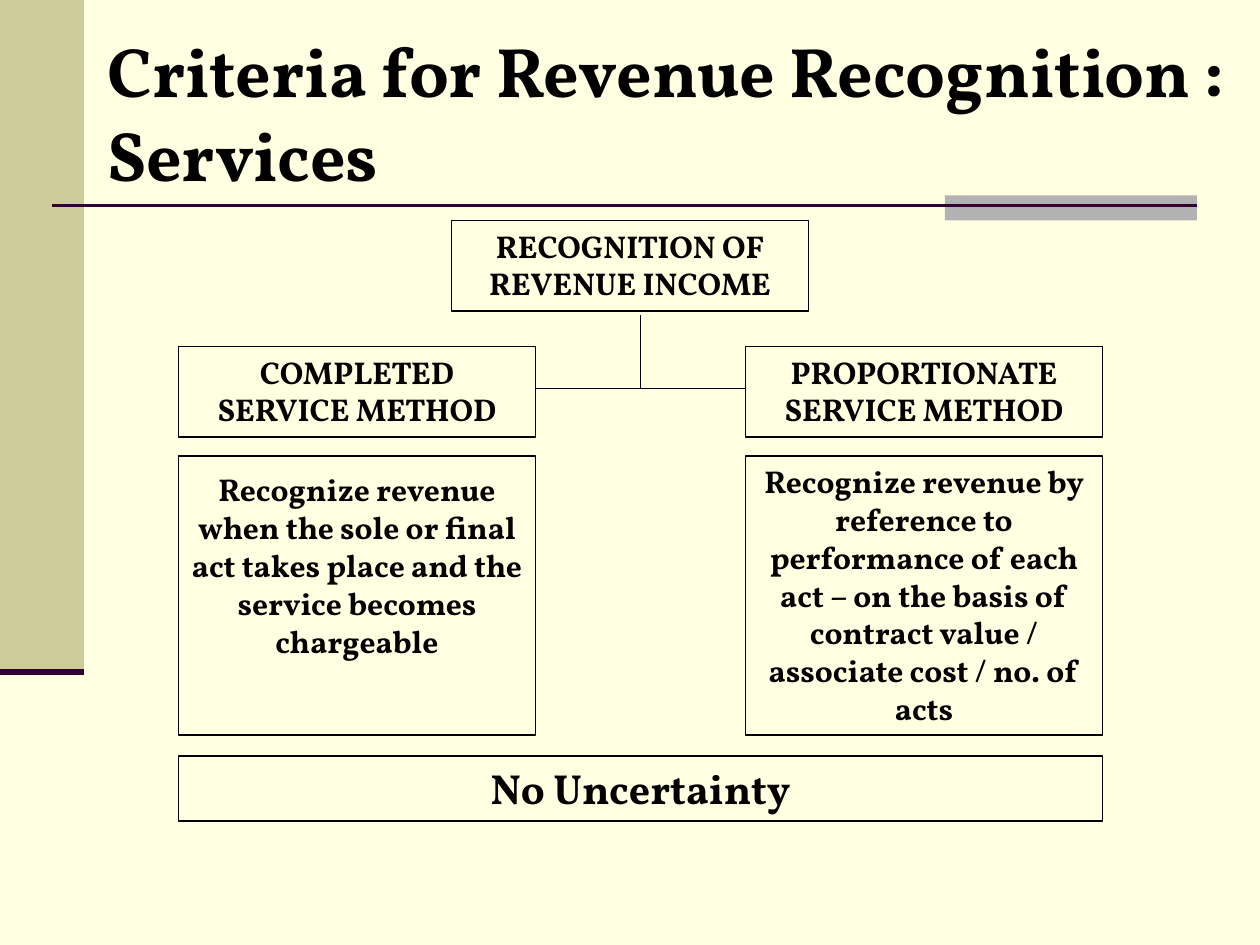
from pptx import Presentation
from pptx.dml.color import RGBColor
from pptx.enum import shapes, text
from pptx.oxml import ns
from pptx.util import Pt

CREAM = RGBColor(0xFF, 0xFF, 0xE1)
KHAKI = RGBColor(0xCC, 0xCC, 0x99)
GRAY = RGBColor(0xB2, 0xB2, 0xB2)
PLUM = RGBColor(0x33, 0x00, 0x33)
BLACK = RGBColor(0, 0, 0)
FACE = "Vollkorn"


def add_line(x1, y1, x2, y2, color, width):
    line = slide.shapes.add_connector(
        shapes.MSO_CONNECTOR.STRAIGHT, Pt(x1), Pt(y1), Pt(x2), Pt(y2))
    line.line.color.rgb = color
    line.line.width = Pt(width)
    props = line._element.spPr
    props.append(props.makeelement(ns.qn("a:effectLst"), {}))


def set_text(shape, words, size, align, inset=3.6):
    frame = shape.text_frame
    frame.word_wrap = True
    frame.auto_size = text.MSO_AUTO_SIZE.NONE
    frame.vertical_anchor = text.MSO_ANCHOR.TOP
    frame.margin_left = frame.margin_right = Pt(7.2)
    frame.margin_top = Pt(inset)
    frame.margin_bottom = Pt(3.6)
    frame.text = words
    para = frame.paragraphs[0]
    para.alignment = align
    para.font.name = FACE
    para.font.size = Pt(size)
    para.font.bold = True
    para.font.color.rgb = BLACK


deck = Presentation()
deck.slide_width, deck.slide_height = Pt(720), Pt(540)
slide = deck.slides.add_slide(deck.slide_layouts[5])
slide.background.fill.solid()
slide.background.fill.fore_color.rgb = CREAM

title = slide.shapes.title
title.left, title.top, title.width, title.height = Pt(54), Pt(12), Pt(666), Pt(103)
set_text(title, "Criteria for Revenue Recognition : Services", 40, text.PP_ALIGN.LEFT)

for x, y, w, h, color in [(0, 0, 48, 384, KHAKI), (540, 111.6, 144, 14.4, GRAY)]:
    band = slide.shapes.add_shape(
        shapes.MSO_SHAPE.RECTANGLE, Pt(x), Pt(y), Pt(w), Pt(h))
    band.shadow.inherit = False
    band.fill.solid()
    band.fill.fore_color.rgb = color
    band.line.fill.background()

add_line(30, 117.6, 684, 117.6, PLUM, 1.5)
add_line(0, 384, 48, 384, PLUM, 3.5)

LEFT, MID, RIGHT = 102, 258, 426
WIDE, HEAD, BODY = 204, 51.6, 159.6
boxes = [
    (MID, 126, WIDE, HEAD, 18, 3.6, "RECOGNITION OF REVENUE INCOME"),
    (LEFT, 198, WIDE, HEAD, 18, 3.6, "COMPLETED SERVICE METHOD"),
    (RIGHT, 198, WIDE, HEAD, 18, 3.6, "PROPORTIONATE SERVICE METHOD"),
    (LEFT, 260.6, WIDE, BODY, 18, 8.2,
     "Recognize revenue when the sole or final act takes place "
     "and the service becomes chargeable"),
    (RIGHT, 260.6, WIDE, BODY, 18, 3.6,
     "Recognize revenue by reference to performance of each act – on the "
     "basis of contract value / associate cost / no. of acts"),
    (LEFT, 432, RIGHT + WIDE - LEFT, 37, 24, 3.6, "No Uncertainty"),
]
for x, y, w, h, size, inset, words in boxes:
    box = slide.shapes.add_shape(
        shapes.MSO_SHAPE.RECTANGLE, Pt(x), Pt(y), Pt(w), Pt(h))
    box.shadow.inherit = False
    box.fill.background()
    box.line.color.rgb = BLACK
    box.line.width = Pt(1)
    set_text(box, words, size, text.PP_ALIGN.CENTER, inset)

add_line(LEFT + WIDE, 222, RIGHT, 222, BLACK, 0.75)
add_line(366, 180, 366, 222, BLACK, 0.75)

deck.save("out.pptx")
